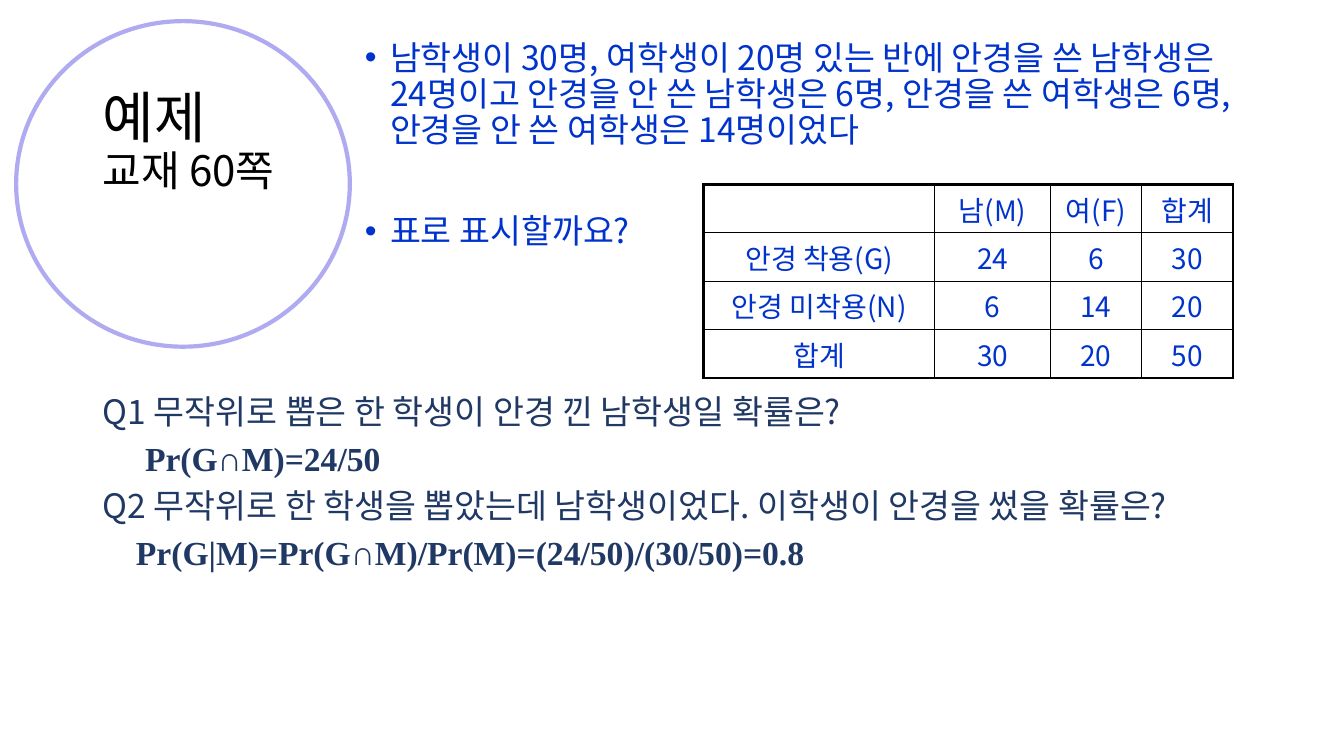
from lxml import etree
from pptx import Presentation
from pptx.dml.color import RGBColor
from pptx.enum.shapes import MSO_SHAPE
from pptx.enum.text import MSO_ANCHOR, PP_ALIGN
from pptx.oxml.ns import qn
from pptx.util import Inches, Pt

COLORS = {"black": "000000", "blue": "0033CC", "navy": "203864", "ring": "6359E5"}
KOREAN, SERIF = "Noto Sans CJK KR", "Times New Roman"

TABLE_ROWS = [
    ["", "남(M)", "여(F)", "합계"],
    ["안경 착용(G)", "24", "6", "30"],
    ["안경 미착용(N)", "6", "14", "20"],
    ["합계", "30", "20", "50"],
]
COL_WIDTHS = [2.29, 1.15, 0.9, 0.91]
BULLETS = [
    ("남학생이 30명, 여학생이 20명 있는 반에 안경을 쓴 남학생은 24명이고 "
     "안경을 안 쓴 남학생은 6명, 안경을 쓴 여학생은 6명, "
     "안경을 안 쓴 여학생은 14명이었다", 10),
    ("표로 표시할까요?", 46),
]
QUESTIONS = [
    ("Q1 무작위로 뽑은 한 학생이 안경 낀 남학생일 확률은?", "Pr(G∩M)=24/50", 0.42),
    ("Q2 무작위로 한 학생을 뽑았는데 남학생이었다. 이학생이 안경을 썼을 확률은?",
     "Pr(G|M)=Pr(G∩M)/Pr(M)=(24/50)/(30/50)=0.8", 0.33),
]


def rgb(name):
    """Return the named colour."""
    return RGBColor.from_string(COLORS[name])


def add_run(p, text, size, color, font=KOREAN, bold=False):
    """Append a styled run to a paragraph."""
    r = p.add_run()
    r.text = text
    r.font.size, r.font.bold, r.font.name = Pt(size), bold, font
    r.font.color.rgb = rgb(color)
    etree.SubElement(r.font._element, qn("a:ea"), typeface=font)


def add_text(slide, box, anchor=MSO_ANCHOR.TOP):
    """Add a wrapping text box and return its frame."""
    tf = slide.shapes.add_textbox(*map(Inches, box)).text_frame
    tf.word_wrap, tf.vertical_anchor = True, anchor
    return tf


def next_paragraph(tf, first):
    """Return the opening paragraph or a new one."""
    return tf.paragraphs[0] if first else tf.add_paragraph()


def set_indent(p, left, first=0):
    """Set left margin and first-line indent in inches."""
    pPr = p._p.get_or_add_pPr()
    pPr.set("marL", str(Inches(left)))
    pPr.set("indent", str(Inches(first)))
    return pPr


def draw_title(slide, box):
    """Draw the two-size title."""
    p = add_text(slide, box, MSO_ANCHOR.MIDDLE).paragraphs[0]
    p.line_spacing = 0.9
    add_run(p, "예제", 40, "black")
    p.add_line_break()
    add_run(p, "교재 60쪽", 30, "black")


def draw_ring(slide, box):
    """Draw the translucent ring around the title."""
    sp = slide.shapes.add_shape(MSO_SHAPE.OVAL, *map(Inches, box))
    sp.shadow.inherit = False
    sp.fill.background()
    sp.line.color.rgb, sp.line.width = rgb("ring"), Pt(3)
    clr = sp.line._ln.find(".//" + qn("a:srgbClr"))
    etree.SubElement(clr, qn("a:alpha"), val="50000")


def draw_bullets(slide, box):
    """Draw the bulleted problem statement."""
    tf = add_text(slide, box)
    for i, (text, before) in enumerate(BULLETS):
        p = next_paragraph(tf, i == 0)
        p.line_spacing, p.space_before = 0.9, Pt(before)
        pPr = set_indent(p, 0.25, -0.25)
        etree.SubElement(pPr, qn("a:buFont"), typeface="Arial")
        etree.SubElement(pPr, qn("a:buChar"), char="•")
        add_run(p, text, 24, "blue")


def set_borders(cell, outer):
    """Give a cell thick lines on its outer sides and thin ones elsewhere."""
    tcPr = cell._tc.get_or_add_tcPr()
    for i, (side, thick) in enumerate(outer.items()):
        ln = etree.Element(qn("a:ln" + side), w=str(Pt(2.25 if thick else 1)))
        fill = etree.SubElement(ln, qn("a:solidFill"))
        etree.SubElement(fill, qn("a:srgbClr"), val=COLORS["black"])
        tcPr.insert(i, ln)


def draw_table(slide, box):
    """Draw the glasses-by-sex count table."""
    n_rows, n_cols = len(TABLE_ROWS), len(COL_WIDTHS)
    table = slide.shapes.add_table(n_rows, n_cols, *map(Inches, box)).table
    table.first_row = table.horz_banding = False
    for col, width in zip(table.columns, COL_WIDTHS):
        col.width = Inches(width)
    for i, row in enumerate(TABLE_ROWS):
        table.rows[i].height = Inches(box[3] / n_rows)
        for j, text in enumerate(row):
            cell = table.cell(i, j)
            cell.fill.background()
            cell.vertical_anchor = MSO_ANCHOR.MIDDLE
            cell.margin_left = cell.margin_right = Inches(0.07)
            cell.margin_top = cell.margin_bottom = Inches(0.04)
            set_borders(cell, {"L": j == 0, "R": j == n_cols - 1,
                               "T": i == 0, "B": i == n_rows - 1})
            if text:
                p = cell.text_frame.paragraphs[0]
                p.alignment, p.space_before = PP_ALIGN.CENTER, Pt(4)
                add_run(p, text, 20, "blue")


def draw_questions(slide, box):
    """Draw each question followed by its indented answer."""
    tf = add_text(slide, box)
    for i, (question, answer, indent) in enumerate(QUESTIONS):
        p = next_paragraph(tf, i == 0)
        p.space_before = Pt(4.8)
        add_run(p, question, 24, "navy")
        p = next_paragraph(tf, False)
        p.space_before = Pt(4.8)
        set_indent(p, indent)
        add_run(p, answer, 24, "navy", SERIF, True)


def main():
    """Build and save the slide."""
    prs = Presentation()
    prs.slide_width, prs.slide_height = Inches(13.33), Inches(7.5)
    slide = prs.slides.add_slide(prs.slide_layouts[6])
    draw_title(slide, (0.92, 0.6, 2.13, 1.64))
    draw_bullets(slide, (3.52, 0.36, 8.9, 5.05))
    draw_ring(slide, (0.16, 0.21, 3.31, 3.23))
    draw_table(slide, (6.98, 1.83, 5.25, 1.92))
    draw_questions(slide, (0.92, 3.83, 11.97, 2.07))
    prs.save("out.pptx")


if __name__ == "__main__":
    main()
